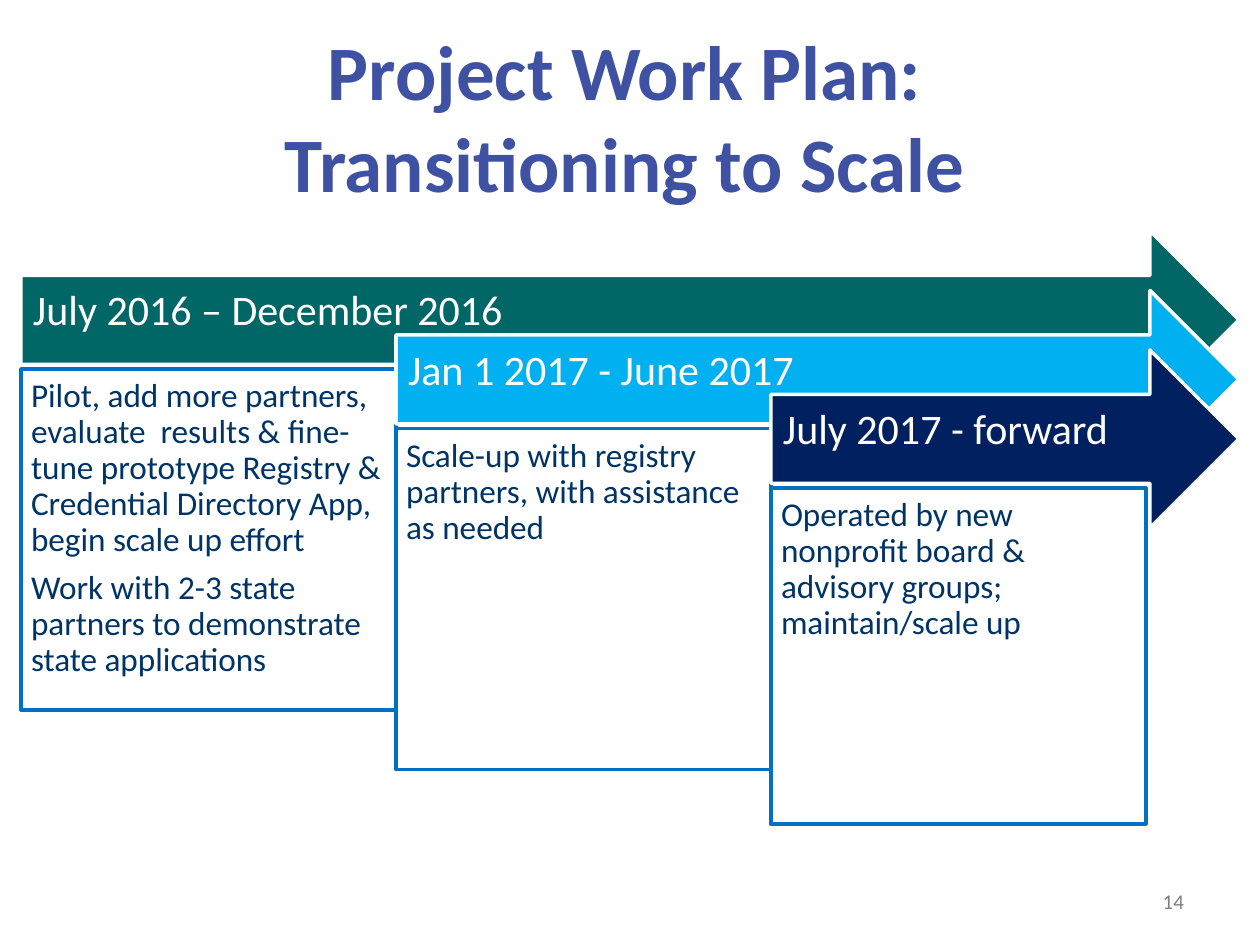
import pptx
import pptx.util
import pptx.dml.color
import pptx.enum.shapes
import pptx.enum.text

# Content
TITLE = ["Project Work Plan:", "Transitioning to Scale"]
PAGE_NUMBER = "14"
STAGES = [
    {"period": "July 2016 – December 2016", "color": "006666", "tasks": [
        "Pilot, add more partners, evaluate  results & fine-tune prototype "
        "Registry & Credential Directory App, begin scale up effort",
        "Work with 2-3 state partners to demonstrate state applications"]},
    {"period": "Jan 1 2017 - June 2017", "color": "00B0F0", "tasks": [
        "Scale-up with registry partners, with assistance as needed"]},
    {"period": "July 2017 - forward", "color": "002060", "tasks": [
        "Operated by new nonprofit board & advisory groups; maintain/scale up"]},
]

THEME = {
    "font": "Calibri",
    "title": (44, "3E51A3"), "period": (24, "FFFFFF"),
    "task": (19, "003366"), "number": (12, "808080"),
    "panel": "FFFFFF", "panel_line": "0070C0", "arrow_line": "FFFFFF",
}

# Geometry in px, 126 to the inch
PX = 914400 // 126
LEFT, RIGHT = 21, 1239
ARROW_TOP, ARROW_HEIGHT = 231, 178
PANEL_TOP, PANEL_WIDTH = 369, 375
PANEL_HEIGHTS = [341, 341, 336]
STEP_DOWN = 59.5

ALIGN = pptx.enum.text.PP_ALIGN
ANCHOR = pptx.enum.text.MSO_ANCHOR
SHAPE = pptx.enum.shapes.MSO_SHAPE


def px(length):
    return round(length * PX)


def rgb(value):
    return pptx.dml.color.RGBColor.from_string(value)


def add_span(para, text, style, bold=False):
    size, color = THEME[style]
    span = para.add_run()
    span.text = text
    span.font.name = THEME["font"]
    span.font.size = pptx.util.Pt(size)
    span.font.bold = bold
    span.font.color.rgb = rgb(color)


def set_frame(frame, anchor, insets):
    frame.word_wrap = True
    frame.auto_size = pptx.enum.text.MSO_AUTO_SIZE.NONE
    frame.vertical_anchor = anchor
    (frame.margin_left, frame.margin_top,
     frame.margin_right, frame.margin_bottom) = map(px, insets)


def add_block(page, kind, place, fill, line, texts, style, anchor, insets):
    block = page.shapes.add_shape(kind, *map(px, place))
    block.shadow.inherit = False
    block.fill.solid()
    block.fill.fore_color.rgb = rgb(fill)
    block.line.color.rgb = rgb(line)
    block.line.width = pptx.util.Pt(2)
    frame = block.text_frame
    set_frame(frame, anchor, insets)
    for index, text in enumerate(texts):
        para = frame.add_paragraph() if index else frame.paragraphs[0]
        para.alignment = ALIGN.LEFT
        para.line_spacing = 0.9
        if index:
            para.space_before = pptx.util.Pt(7)
        add_span(para, text, style)


def main():
    deck = pptx.Presentation()
    deck.slide_width, deck.slide_height = px(1260), px(945)
    page = deck.slides.add_slide(deck.slide_layouts[5])

    # Stages: each arrow starts one panel further right and ends at one edge
    for index, stage in enumerate(STAGES):
        left = LEFT + index * PANEL_WIDTH
        drop = index * STEP_DOWN
        add_block(page, SHAPE.RIGHT_ARROW,
                  (left, ARROW_TOP + drop, RIGHT - left, ARROW_HEIGHT),
                  stage["color"], THEME["arrow_line"], [stage["period"]],
                  "period", ANCHOR.MIDDLE, (12, 12, 35, 28))
        add_block(page, SHAPE.RECTANGLE,
                  (left, PANEL_TOP + drop, PANEL_WIDTH, PANEL_HEIGHTS[index]),
                  THEME["panel"], THEME["panel_line"], stage["tasks"],
                  "task", ANCHOR.TOP, (10, 10, 10, 10))

    # Title
    title = page.shapes.title
    title.left, title.top, title.width, title.height = map(px, (-10, 42, 1270, 147))
    set_frame(title.text_frame, ANCHOR.MIDDLE, (13, 6, 13, 6))
    para = title.text_frame.paragraphs[0]
    para.alignment = ALIGN.CENTER
    for index, text in enumerate(TITLE):
        if index:
            para.add_line_break()
        add_span(para, text, "title", bold=True)

    # Page number
    box = page.shapes.add_textbox(*map(px, (903, 876, 294, 50)))
    set_frame(box.text_frame, ANCHOR.MIDDLE, (13, 6, 13, 6))
    para = box.text_frame.paragraphs[0]
    para.alignment = ALIGN.RIGHT
    add_span(para, PAGE_NUMBER, "number")

    deck.save("out.pptx")


if __name__ == "__main__":
    main()
